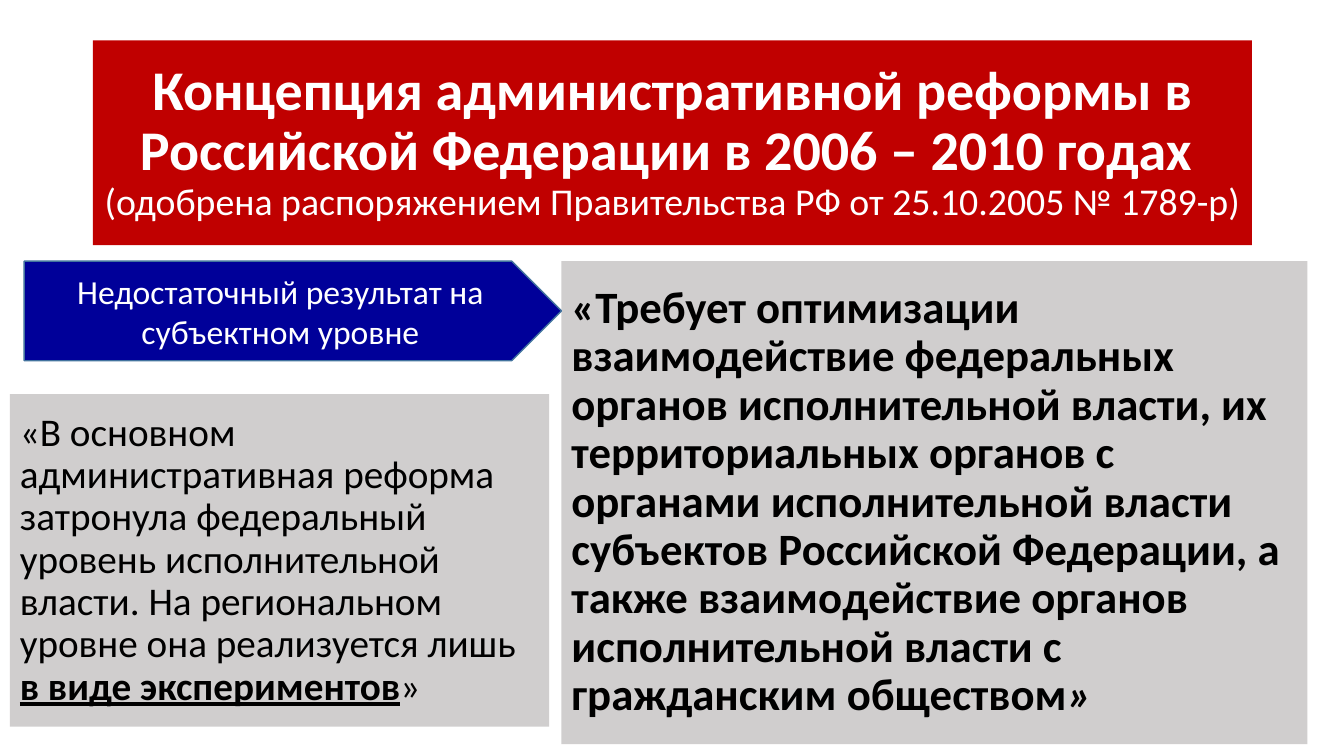
from pptx import Presentation
from pptx.dml.color import RGBColor
from pptx.enum import shapes, text
from pptx.util import Cm, Pt

COLORS = {
    "red": "C00000",
    "grey": "D0CECE",
    "navy": "000099",
    "outline": "43739E",
    "white": "FFFFFF",
    "black": "000000",
}
RECTANGLE = shapes.MSO_SHAPE.RECTANGLE
PENTAGON = shapes.MSO_SHAPE.PENTAGON
CENTER, LEFT = text.PP_ALIGN.CENTER, text.PP_ALIGN.LEFT

prs = Presentation()
prs.slide_width, prs.slide_height = Cm(33.87), Cm(19.05)
slide = prs.slides.add_slide(prs.slide_layouts[6])


def add_panel(kind, box, fill, ink, size, align, spacing=0.9):
    """Add a filled shape and return it with its formatted, empty paragraph."""
    panel = slide.shapes.add_shape(kind, *(Cm(length) for length in box))
    panel.shadow.inherit = False
    panel.fill.solid()
    panel.fill.fore_color.rgb = RGBColor.from_string(COLORS[fill])
    panel.line.fill.background()
    frame = panel.text_frame
    frame.word_wrap = True
    frame.vertical_anchor = text.MSO_ANCHOR.MIDDLE
    paragraph = frame.paragraphs[0]
    paragraph.alignment = align
    paragraph.line_spacing = spacing
    paragraph.font.name = "Calibri"
    paragraph.font.size = Pt(size)
    paragraph.font.color.rgb = RGBColor.from_string(COLORS[ink])
    return panel, paragraph


def add_run(paragraph, wording, **styles):
    run = paragraph.add_run()
    run.text = wording
    for style, value in styles.items():
        setattr(run.font, style, value)


# Title
_, title = add_panel(RECTANGLE, (2.34, 1.02, 29.21, 5.16), "red", "white", 40, CENTER)
add_run(title, "Концепция административной реформы в Российской Федерации в 2006 – 2010 годах ", bold=True)
title.add_line_break()
add_run(title, "(одобрена распоряжением Правительства РФ от 25.10.2005 № 1789-р)", size=Pt(27))

# Required improvement
_, requirement = add_panel(RECTANGLE, (14.15, 6.58, 18.8, 12.17), "grey", "black", 32, LEFT)
requirement.space_before = Pt(10)
requirement.font.bold = True
add_run(
    requirement,
    "«Требует оптимизации взаимодействие федеральных органов исполнительной власти, "
    "их территориальных органов с органами исполнительной власти субъектов Российской "
    "Федерации, а также взаимодействие органов исполнительной власти с гражданским обществом",
)
add_run(requirement, "»", italic=True)

# Regional shortfall, pointing to the requirement
arrow, shortfall = add_panel(PENTAGON, (0.61, 6.58, 13.54, 2.51), "navy", "white", 24, CENTER, 1.0)
arrow.line.color.rgb = RGBColor.from_string(COLORS["outline"])
arrow.line.width = Pt(1)
add_run(shortfall, "Недостаточный результат на субъектном уровне")

# Evidence
_, evidence = add_panel(RECTANGLE, (0.25, 9.93, 13.59, 8.38), "grey", "black", 28, LEFT)
evidence.space_before = Pt(10)
add_run(
    evidence,
    "«В основном административная реформа затронула федеральный уровень исполнительной "
    "власти. На региональном уровне она реализуется лишь ",
)
add_run(evidence, "в виде экспериментов", bold=True, underline=True)
add_run(evidence, "»")

prs.save("out.pptx")
